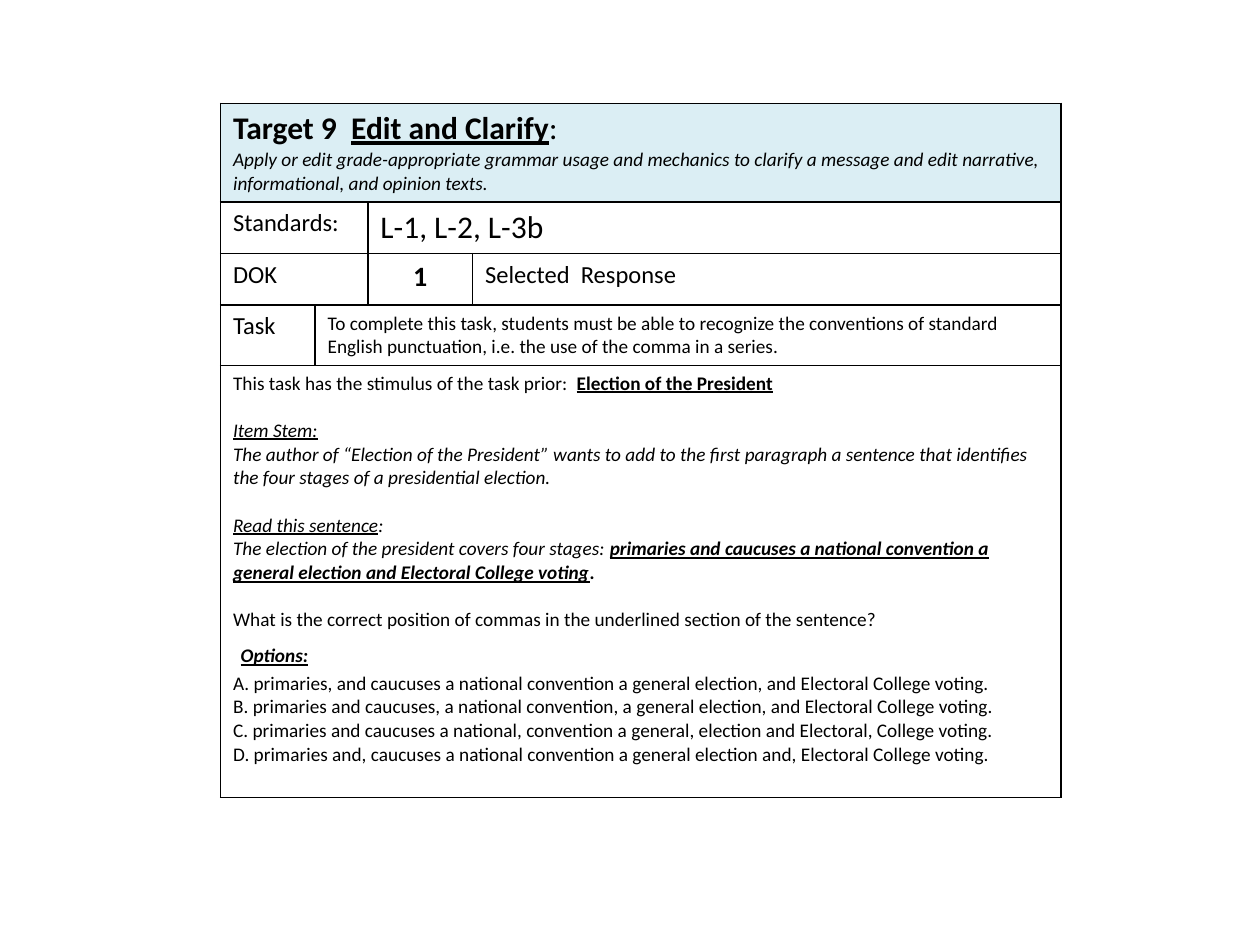
from dataclasses import dataclass

from lxml.etree import fromstring
from pptx import Presentation
from pptx.dml.color import RGBColor as Color
from pptx.enum.text import PP_ALIGN as Align
from pptx.oxml.ns import nsdecls
from pptx.util import Inches, Pt


@dataclass(frozen=True)
class Theme:
    font: str = "Calibri"
    ink: str = "000000"
    header: str = "DBEEF4"
    heading: int = 18
    number: int = 16
    label: int = 14
    body: int = 11
    line_gap: float = 13.4


THEME = Theme()
COLUMN_WIDTHS = (0.75, 0.42, 0.83, 4.67)
ROW_HEIGHTS = (0.78, 0.41, 0.41, 0.47, 3.43)


@dataclass(frozen=True)
class Line:
    runs: tuple
    size: int = THEME.body
    before: float = 0
    after: float = 0
    indent: float = 0
    align: Align = Align.LEFT


def line(text, style="", **options):
    """Make a line of one run; style letters are b, i and u."""
    return Line(((text, style),), **options)


HEADER = (
    Line((("Target 9  ", "b"), ("Edit and Clarify", "bu"), (":", "")), THEME.heading),
    line("Apply or edit grade-appropriate grammar usage and mechanics to clarify a message and edit narrative,", "i"),
    line("informational, and opinion texts.", "i"),
)

TASK = line(
    "To complete this task, students must be able to recognize the conventions of standard "
    "English punctuation, i.e. the use of the comma in a series."
)

OPTIONS = (
    "A. primaries, and caucuses a national convention a general election, and Electoral College voting.",
    "B. primaries and caucuses, a national convention, a general election, and Electoral College voting.",
    "C. primaries and caucuses a national, convention a general, election and Electoral, College voting.",
    "D. primaries and, caucuses a national convention a general election and, Electoral College voting.",
)

ITEM = (
    Line((("This task has the stimulus of the task prior:  ", ""), ("Election of the President", "bu"))),
    line("Item Stem:", "iu", before=THEME.line_gap),
    line(
        "The author of “Election of the President” wants to add to the first paragraph a sentence "
        "that identifies the four stages of a presidential election.",
        "i",
    ),
    Line((("Read this sentence", "iu"), (":", "i")), before=THEME.line_gap),
    Line((
        ("The election of the president covers four stages: ", "i"),
        ("primaries and caucuses a national convention a general election and Electoral College voting", "biu"),
        (".", "bi"),
    )),
    line(
        "What is the correct position of commas in the underlined section of the sentence?",
        before=THEME.line_gap,
    ),
    line("Options:", "biu", before=7, after=2, indent=0.06),
    *(line(option) for option in OPTIONS),
)

CELLS = (
    (0, 0, 3, HEADER),
    (1, 0, 1, (line("Standards:", size=THEME.label),)),
    (1, 2, 3, (line("L-1, L-2, L-3b", size=THEME.heading),)),
    (2, 0, 1, (line("DOK", size=THEME.label),)),
    (2, 2, 2, (line("1", "b", size=THEME.number, align=Align.CENTER),)),
    (2, 3, 3, (line("Selected  Response", size=THEME.label),)),
    (3, 0, 0, (line("Task", size=THEME.label),)),
    (3, 1, 3, (TASK,)),
    (4, 0, 3, ITEM),
)


def write_line(paragraph, content):
    """Write one line of styled runs into a paragraph."""
    paragraph.alignment = content.align
    paragraph.space_before = Pt(content.before)
    paragraph.space_after = Pt(content.after)
    if content.indent:
        paragraph._p.get_or_add_pPr().set("marL", str(Inches(content.indent)))
    for text, style in content.runs:
        run = paragraph.add_run()
        run.text = text
        font = run.font
        font.name = THEME.font
        font.size = Pt(content.size)
        font.color.rgb = Color.from_string(THEME.ink)
        font.bold = "b" in style
        font.italic = "i" in style
        font.underline = "u" in style


def write_cell(cell, lines):
    """Fill a cell with one paragraph per line."""
    frame = cell.text_frame
    for index, content in enumerate(lines):
        paragraph = frame.add_paragraph() if index else frame.paragraphs[0]
        write_line(paragraph, content)


def format_cell(cell, fill):
    """Set the fill and a thin border on all four sides."""
    if fill:
        cell.fill.solid()
        cell.fill.fore_color.rgb = Color.from_string(fill)
    else:
        cell.fill.background()
    properties = cell._tc.get_or_add_tcPr()
    for index, side in enumerate("LRTB"):
        border = fromstring(
            f'<a:ln{side} {nsdecls("a")} w="{Pt(1)}"><a:solidFill>'
            f'<a:srgbClr val="{THEME.ink}"/></a:solidFill></a:ln{side}>'
        )
        properties.insert(index, border)


def add_task_table(slide):
    """Add the task card as a table with merged cells."""
    shape = slide.shapes.add_table(
        len(ROW_HEIGHTS), len(COLUMN_WIDTHS), Inches(1.75), Inches(0.82),
        Inches(sum(COLUMN_WIDTHS)), Inches(sum(ROW_HEIGHTS)),
    )
    table = shape.table
    table.first_row = False
    table.horz_banding = False
    for column, width in zip(table.columns, COLUMN_WIDTHS):
        column.width = Inches(width)
    for row_index, (row, height) in enumerate(zip(table.rows, ROW_HEIGHTS)):
        row.height = Inches(height)
        for cell in row.cells:
            format_cell(cell, None if row_index else THEME.header)
    for row_index, first, last, lines in CELLS:
        cell = table.cell(row_index, first)
        if last > first:
            cell.merge(table.cell(row_index, last))
        write_cell(cell, lines)


def main():
    """Build and save the presentation."""
    presentation = Presentation()
    presentation.slide_width = Inches(10)
    presentation.slide_height = Inches(7.5)
    slide = presentation.slides.add_slide(presentation.slide_layouts[6])
    add_task_table(slide)
    presentation.save("out.pptx")


if __name__ == "__main__":
    main()
